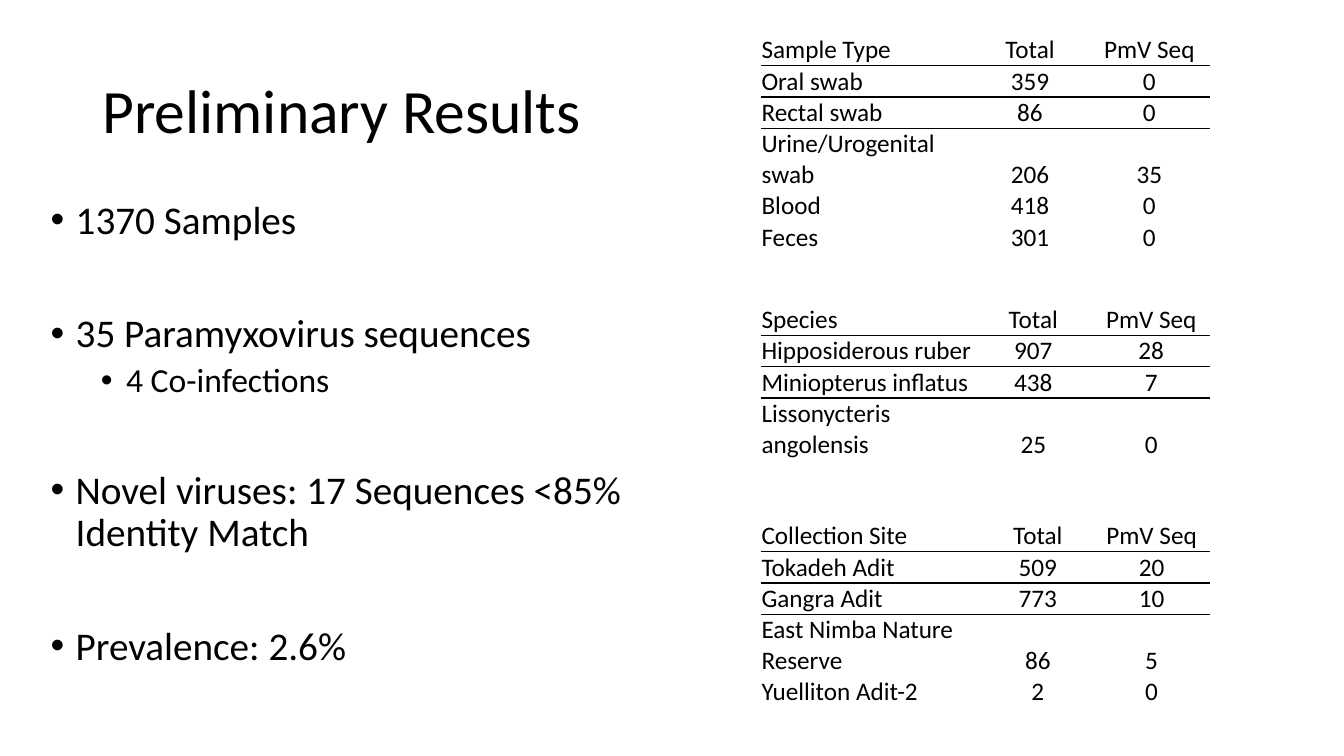
from dataclasses import dataclass

from lxml import etree
from pptx import Presentation
from pptx.dml.color import RGBColor
from pptx.enum.text import MSO_ANCHOR, PP_ALIGN
from pptx.oxml.ns import qn
from pptx.util import Pt

LEFT, CENTER = PP_ALIGN.LEFT, PP_ALIGN.CENTER
TOP, MIDDLE, BOTTOM = MSO_ANCHOR.TOP, MSO_ANCHOR.MIDDLE, MSO_ANCHOR.BOTTOM
TITLE_ONLY = 5
NO_STYLE = "{2D5ABB26-0587-4C30-8999-92F81FD0307C}"


@dataclass(frozen=True)
class Theme:
    font: str = "Calibri"
    ink: str = "000000"
    title: int = 44
    bullet: int = 28
    sub_bullet: int = 24
    table: int = 18
    rule: int = 1
    line_spacing: float = 0.9


THEME = Theme()

BULLETS = [
    ("1370 Samples", 0, 0),
    ("35 Paramyxovirus sequences", 0, 50.75),
    ("4 Co-infections", 1, 5),
    ("Novel viruses: 17 Sequences <85% Identity Match", 0, 50.75),
    ("Prevalence: 2.6%", 0, 50.75),
]

TABLE_LEFT = 543.5
ROW, TALL_ROW = 22.4, 44.2
TABLES = [
    (24.5, ROW, (150.5, 83.5, 87), [
        ("Sample Type", "Total", "PmV Seq"),
        ("Oral swab", "359", "0"),
        ("Rectal swab", "86", "0"),
        ("Urine/Urogenital swab", "206", "35"),
        ("Blood", "418", "0"),
        ("Feces", "301", "0"),
    ]),
    (213, 26.5, (152.5, 84.25, 84.25), [
        ("Species", "Total", "PmV Seq"),
        ("Hipposiderous ruber", "907", "28"),
        ("Miniopterus inflatus", "438", "7"),
        ("Lissonycteris angolensis", "25", "0"),
    ]),
    (368, 26, (158.5, 78.75, 83.75), [
        ("Collection Site", "Total", "PmV Seq"),
        ("Tokadeh Adit", "509", "20"),
        ("Gangra Adit", "773", "10"),
        ("East Nimba Nature Reserve", "86", "5"),
        ("Yuelliton Adit-2", "2", "0"),
    ]),
]
TALL_INDEX = 3


def format_paragraph(p, size, align=LEFT):
    p.alignment = align
    for r in p.runs:
        r.font.name = THEME.font
        r.font.size = Pt(size)
        r.font.color.rgb = RGBColor.from_string(THEME.ink)


def add_title(s, text):
    sp = s.shapes.title
    sp.left, sp.top, sp.width, sp.height = Pt(66), Pt(28.75), Pt(828), Pt(104.5)
    tf = sp.text_frame
    tf.text = text
    tf.vertical_anchor = MIDDLE
    p = tf.paragraphs[0]
    p.line_spacing = THEME.line_spacing
    format_paragraph(p, THEME.title)


def set_bullet(p, level):
    pPr = p._p.get_or_add_pPr()
    pPr.set("marL", str(Pt(18 + 36 * level)))
    pPr.set("indent", str(Pt(-18)))
    etree.SubElement(pPr, qn("a:buFont"), typeface="Arial")
    etree.SubElement(pPr, qn("a:buChar"), char="•")


def add_bullets(s, items):
    tf = s.shapes.add_textbox(Pt(29), Pt(139.75), Pt(494.5), Pt(342.5)).text_frame
    tf.word_wrap = True
    tf.vertical_anchor = TOP
    for i, (text, level, gap) in enumerate(items):
        p = tf.add_paragraph() if i else tf.paragraphs[0]
        p.text = text
        p.level = level
        set_bullet(p, level)
        p.line_spacing = THEME.line_spacing
        p.space_before = Pt(gap)
        format_paragraph(p, THEME.sub_bullet if level else THEME.bullet)


def add_rule(cell, side):
    tcPr = cell._tc.get_or_add_tcPr()
    ln = etree.SubElement(tcPr, qn(side), w=str(Pt(THEME.rule)))
    fill = etree.SubElement(ln, qn("a:solidFill"))
    etree.SubElement(fill, qn("a:srgbClr"), val=THEME.ink)


def format_cell(cell, text, row, column):
    cell.text = text
    cell.vertical_anchor = BOTTOM
    cell.margin_left = cell.margin_right = cell.margin_top = Pt(0.5)
    cell.margin_bottom = Pt(0)
    if row in (1, 2):
        add_rule(cell, "a:lnT")
    if row in (0, 1):
        add_rule(cell, "a:lnB")
    cell.fill.background()
    format_paragraph(cell.text_frame.paragraphs[0], THEME.table,
                     CENTER if column else LEFT)


def add_count_table(s, top, header_height, widths, rows):
    heights = [header_height] + [ROW] * (len(rows) - 1)
    heights[TALL_INDEX] = TALL_ROW
    frame = s.shapes.add_table(len(rows), len(widths), Pt(TABLE_LEFT), Pt(top),
                               Pt(sum(widths)), Pt(sum(heights)))
    table = frame.table
    table.first_row = table.horz_banding = False
    table._tbl.tblPr.find(qn("a:tableStyleId")).text = NO_STYLE
    for column, width in zip(table.columns, widths):
        column.width = Pt(width)
    for i, (height, values) in enumerate(zip(heights, rows)):
        table.rows[i].height = Pt(height)
        for j, text in enumerate(values):
            format_cell(table.cell(i, j), text, i, j)


def main():
    prs = Presentation()
    prs.slide_width, prs.slide_height = Pt(960), Pt(540)
    s = prs.slides.add_slide(prs.slide_layouts[TITLE_ONLY])
    add_title(s, "Preliminary Results")
    add_bullets(s, BULLETS)
    for top, header_height, widths, rows in TABLES:
        add_count_table(s, top, header_height, widths, rows)
    prs.save("out.pptx")


if __name__ == "__main__":
    main()
